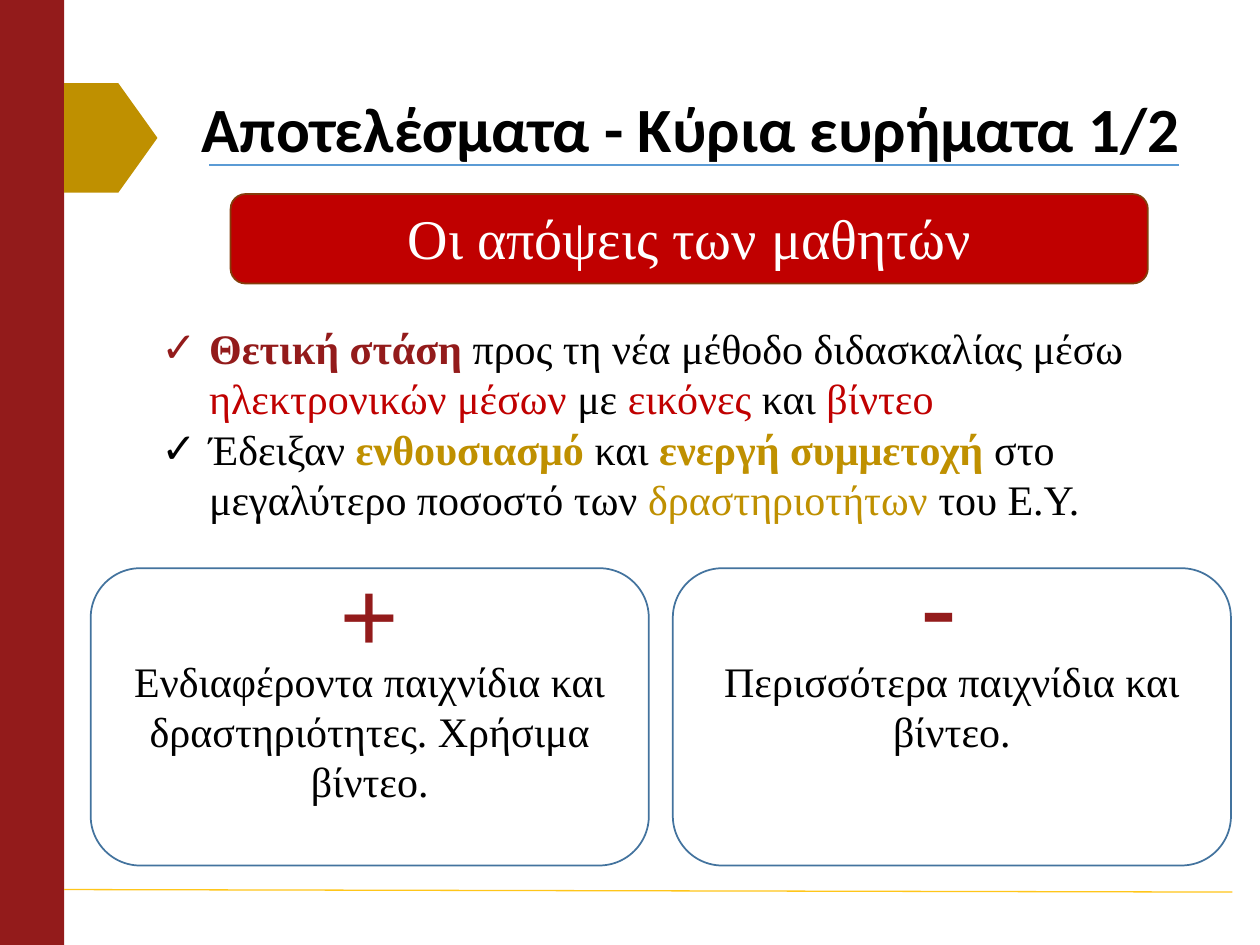
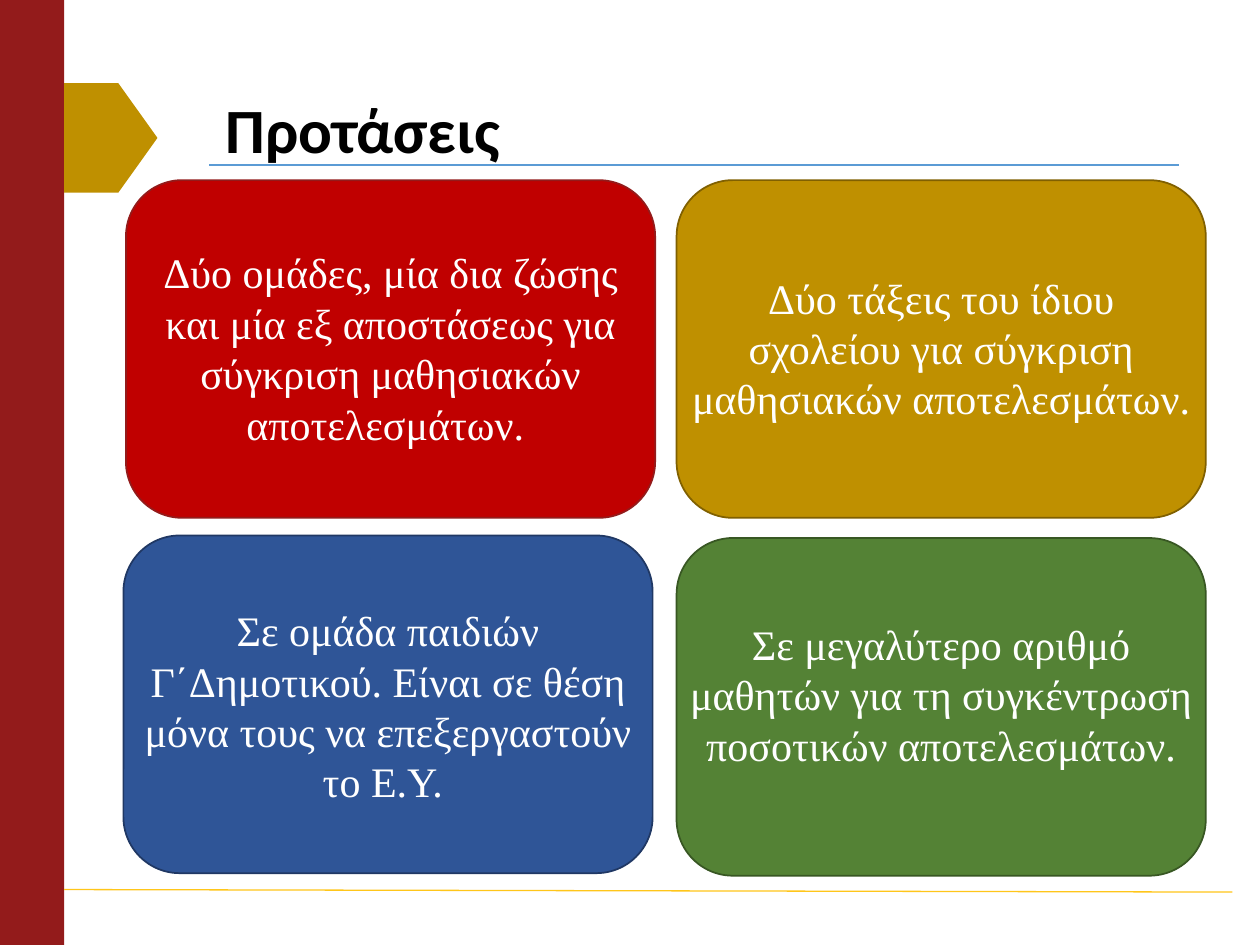
from lxml import etree
from pptx import Presentation
from pptx import util as u
from pptx.dml.color import RGBColor
from pptx.enum import shapes, text
from pptx.oxml import ns

CRIMSON, RED, GOLD = "931B1B", "C00000", "BF9000"
BLUE, SKY, YELLOW = "2F5597", "5B9BD5", "FFC61A"
BLACK, WHITE, GREEN = "000000", "FFFFFF", "548235"
SERIF, SANS = "Times New Roman", "Calibri"
TITLE_AND_BODY, TITLE_ONLY = 1, 5


def colour(value):
    return RGBColor.from_string(value)


def style_runs(para, font, size, shade, bold=False):
    for span in para.runs:
        span.font.name = font
        span.font.size = u.Pt(size)
        span.font.bold = bold
        span.font.color.rgb = colour(shade)


def place(item, area):
    item.left, item.top, item.width, item.height = map(u.Inches, area)


class Deck:
    def __init__(self):
        self.deck = Presentation()
        self.deck.slide_width = u.Inches(10)
        self.deck.slide_height = u.Inches(7.5)
        self.page = None

    def new_page(self, layout, title, title_area):
        self.page = self.deck.slides.add_slide(self.deck.slide_layouts[layout])
        self.shape("RECTANGLE", (0, 0, 0.51, 7.5), CRIMSON)
        self.line((1.66, 1.31), (9.36, 1.31), SKY)
        self.line((0.51, 7.06), (9.78, 7.08), YELLOW)
        marker = self.shape("PENTAGON", (0.51, 0.66, 0.74, 0.87), GOLD)
        marker.adjustments[0] = 0.42
        self.title(title, title_area)

    def title(self, wording, area):
        box = self.page.shapes.title
        place(box, area)
        frame = box.text_frame
        frame.text = wording
        frame.auto_size = text.MSO_AUTO_SIZE.NONE
        frame.vertical_anchor = text.MSO_ANCHOR.MIDDLE
        para = frame.paragraphs[0]
        para.alignment = text.PP_ALIGN.LEFT
        para.line_spacing = 0.9
        style_runs(para, SANS, 36, BLACK, True)

    def shape(self, kind, area, fill=None, outline=None):
        item = self.page.shapes.add_shape(
            getattr(shapes.MSO_SHAPE, kind), *map(u.Inches, area))
        item.shadow.inherit = False
        if fill:
            item.fill.solid()
            item.fill.fore_color.rgb = colour(fill)
        else:
            item.fill.background()
        if outline:
            item.line.color.rgb = colour(outline)
            item.line.width = u.Pt(1)
        else:
            item.line.fill.background()
        return item

    def line(self, start, end, shade):
        rule = self.page.shapes.add_connector(
            shapes.MSO_CONNECTOR.STRAIGHT, *map(u.Inches, start + end))
        rule.line.color.rgb = colour(shade)
        rule.line.width = u.Pt(0.75)
        properties = rule.element.find(ns.qn("p:spPr"))
        etree.SubElement(properties, ns.qn("a:effectLst"))

    def label(self, wording, area, size=24, shade=BLACK, bold=False):
        box = self.page.shapes.add_textbox(*map(u.Inches, area))
        frame = box.text_frame
        frame.word_wrap = True
        frame.text = wording
        para = frame.paragraphs[0]
        para.alignment = text.PP_ALIGN.CENTER
        style_runs(para, SERIF, size, shade, bold)

    def checklist(self, items, area):
        box = self.page.placeholders[1]
        place(box, area)
        frame = box.text_frame
        frame.auto_size = text.MSO_AUTO_SIZE.NONE
        for index, pieces in enumerate(items):
            para = frame.add_paragraph() if index else frame.paragraphs[0]
            para.space_before = u.Pt(0)
            for wording, shade, bold in pieces:
                span = para.add_run()
                span.text = wording
                span.font.name = SERIF
                span.font.size = u.Pt(24)
                span.font.bold = bold
                span.font.color.rgb = colour(shade)
            properties = para._p.get_or_add_pPr()
            properties.set("marL", str(u.Inches(0.38)))
            properties.set("indent", str(-u.Inches(0.38)))
            bullet = etree.SubElement(properties, ns.qn("a:buChar"))
            bullet.set("char", "✓")


def build_findings(deck):
    deck.new_page(TITLE_AND_BODY, "Αποτελέσματα - Κύρια ευρήματα 1/2",
                  (1.5, 0.73, 8.5, 0.63))
    deck.shape("ROUNDED_RECTANGLE", (1.83, 1.54, 7.28, 0.71), RED, "843C0B")
    deck.label("Οι απόψεις των μαθητών", (2.01, 1.57, 6.93, 0.64), 32, WHITE)
    deck.checklist([
        [("Θετική στάση ", CRIMSON, True),
         ("προς τη νέα μέθοδο διδασκαλίας μέσω ", BLACK, False),
         ("ηλεκτρονικών μέσων ", RED, False), ("με", BLACK, False),
         (" εικόνες ", RED, False), ("και", BLACK, False),
         (" βίντεο", RED, False)],
        [("Έδειξαν ", BLACK, False), ("ενθουσιασμό", GOLD, True),
         (" και ", BLACK, False), ("ενεργή συμμετοχή ", GOLD, True),
         ("στο μεγαλύτερο ποσοστό των ", BLACK, False),
         ("δραστηριοτήτων", GOLD, False), (" του Ε.Υ.", BLACK, False)],
    ], (1.18, 2.51, 8.19, 2.0))
    opinions = [
        (0.72, "+", (1.3, 4.3, 3.26, 1.11),
         "Ενδιαφέροντα παιχνίδια και δραστηριότητες. Χρήσιμα βίντεο."),
        (5.34, "-", (6.5, 4.22, 1.9, 1.11),
         "Περισσότερα παιχνίδια και βίντεο."),
    ]
    for left, sign, sign_area, opinion in opinions:
        deck.shape("ROUNDED_RECTANGLE", (left, 4.51, 4.43, 2.36), None, "43739E")
        deck.label(sign, sign_area, 60, CRIMSON, True)
        deck.label(opinion, (left, 5.15, 4.43, 1.31))


def build_proposals(deck):
    deck.new_page(TITLE_ONLY, "Προτάσεις", (1.69, 0.68, 3.86, 0.75))
    proposals = [
        (1, 1.43, RED, CRIMSON, 1.91, 1.72,
         "Δύο ομάδες, μία δια ζώσης και μία εξ αποστάσεως για σύγκριση "
         "μαθησιακών αποτελεσμάτων. "),
        (0.98, 4.25, BLUE, "203864", 4.75, 1.72,
         "Σε ομάδα παιδιών Γ΄Δημοτικού. Είναι σε θέση μόνα τους να "
         "επεξεργαστούν το Ε.Υ. "),
        (5.37, 1.43, GOLD, "806000", 2.11, 1.31,
         "Δύο τάξεις του ίδιου σχολείου για σύγκριση μαθησιακών "
         "αποτελεσμάτων. "),
        (5.37, 4.27, GREEN, "385723", 4.86, 1.31,
         "Σε μεγαλύτερο αριθμό μαθητών για τη συγκέντρωση ποσοτικών "
         "αποτελεσμάτων."),
    ]
    for left, top, fill, outline, text_top, text_height, wording in proposals:
        deck.shape("ROUNDED_RECTANGLE", (left, top, 4.2, 2.68), fill, outline)
        deck.label(wording, (left, text_top, 4.2, text_height), shade=WHITE)


def main():
    deck = Deck()
    build_findings(deck)
    build_proposals(deck)
    deck.deck.save("out.pptx")


if __name__ == "__main__":
    main()
